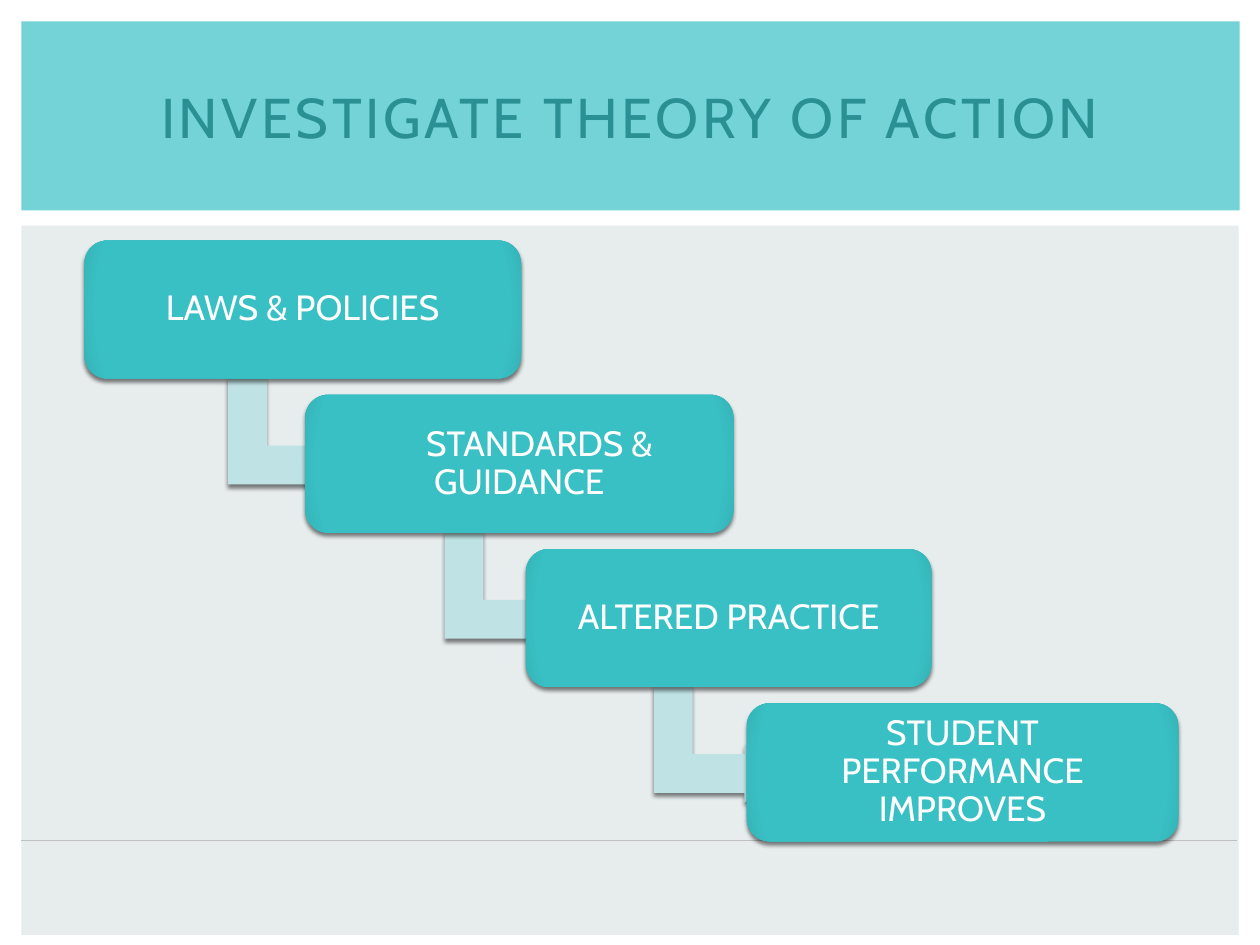
from lxml.etree import SubElement
from pptx import Presentation
from pptx.dml.color import RGBColor
from pptx.enum.shapes import MSO_CONNECTOR as Connector, MSO_SHAPE as Shape
from pptx.enum.text import MSO_ANCHOR as Anchor, MSO_AUTO_SIZE as AutoSize, PP_ALIGN as Align
from pptx.oxml import parse_xml
from pptx.oxml.ns import nsdecls, qn
from pptx.util import Cm, Pt

TITLE = "INVESTIGATE THEORY OF ACTION"
STEPS = [
    {"text": "LAWS & POLICIES", "width": 8.81, "indent": 0},
    {"text": "STANDARDS & GUIDANCE", "width": 8.64, "indent": 0.81},
    {"text": "ALTERED PRACTICE", "width": 8.18, "indent": 0},
    {"text": "STUDENT PERFORMANCE IMPROVES", "width": 8.71, "indent": 0},
]


class Theme:
    font = "Cabin"
    title_size, step_size = 32, 20
    banner, title_text = "73D3D7", "2B9093"
    panel, rule = "E7ECED", "BFBFBF"
    step, step_edge, step_text = "39C0C4", "35B3B7", "FFFFFF"
    arrow = "BFE2E4"


MARGIN = 0.43
FIRST_LEFT, FIRST_TOP = 1.7, 4.85
STEP_RIGHT, STEP_DOWN = 4.45, 3.11
STEP_HEIGHT = 2.78
ARROW_WIDTH, ARROW_HEIGHT = 2.36, 2.67
ARROW_DROP, ARROW_SHIFT = 2.6, 0.17


def color(value):
    return RGBColor.from_string(value)


def paint(shape, fill):
    shape.shadow.inherit = False
    shape.fill.solid()
    shape.fill.fore_color.rgb = color(fill)
    shape.line.fill.background()


def add_block(slide, kind, left, top, width, height, fill):
    shape = slide.shapes.add_shape(kind, Cm(left), Cm(top), Cm(width), Cm(height))
    paint(shape, fill)
    return shape


def cast_shadow(shape):
    effects = shape._element.spPr.find(qn("a:effectLst"))
    effects.append(parse_xml(
        f'<a:outerShdw {nsdecls("a")} blurRad="{Pt(2.5)}" dist="{Pt(2)}" dir="5400000" '
        'rotWithShape="0"><a:srgbClr val="000000"><a:alpha val="50000"/></a:srgbClr></a:outerShdw>'))


def shade_edges(shape):
    properties = shape._element.spPr
    stops = [(0, Theme.step), (90, Theme.step), (100, Theme.step_edge)]
    stop_xml = "".join(f'<a:gs pos="{position * 1000}"><a:srgbClr val="{value}"/></a:gs>'
                       for position, value in stops)
    gradient = parse_xml(
        f'<a:gradFill {nsdecls("a")} rotWithShape="1"><a:gsLst>{stop_xml}</a:gsLst><a:path path="circle">'
        '<a:fillToRect l="100000" t="100000" r="100000" b="100000"/></a:path></a:gradFill>')
    properties.replace(properties.find(qn("a:solidFill")), gradient)


def write(shape, text, size, text_color):
    frame = shape.text_frame
    frame.text = text
    frame.word_wrap = True
    frame.auto_size = AutoSize.NONE
    frame.vertical_anchor = Anchor.MIDDLE
    paragraph = frame.paragraphs[0]
    paragraph.alignment = Align.CENTER
    font = paragraph.runs[0].font
    font.name, font.size = Theme.font, Pt(size)
    font.color.rgb = color(text_color)
    return paragraph


def add_title(slide):
    title = slide.shapes.title
    title.left, title.top, title.width, title.height = Cm(MARGIN), Cm(MARGIN), Cm(24.56), Cm(3.81)
    paint(title, Theme.banner)
    paragraph = write(title, TITLE, Theme.title_size, Theme.title_text)
    paragraph.runs[0].font._element.set("spc", "200")


def add_backdrop(slide):
    add_block(slide, Shape.RECTANGLE, MARGIN, 4.55, 24.54, 14.3, Theme.panel)
    rule = slide.shapes.add_connector(Connector.STRAIGHT, Cm(MARGIN), Cm(16.94), Cm(24.94), Cm(16.94))
    rule.line.color.rgb = color(Theme.rule)
    rule.line.width = Pt(0.79)
    SubElement(rule._element.spPr, qn("a:effectLst"))


def add_arrow(slide, step_center, step_top):
    left = step_center - ARROW_SHIFT - ARROW_WIDTH / 2
    arrow = add_block(slide, Shape.BENT_UP_ARROW, left, step_top + ARROW_DROP,
                      ARROW_WIDTH, ARROW_HEIGHT, Theme.arrow)
    arrow.rotation = 90
    for index, value in enumerate((0.33, 0.25, 0.36)):
        arrow.adjustments[index] = value
    cast_shadow(arrow)


def add_step(slide, step, left, top):
    box = add_block(slide, Shape.ROUNDED_RECTANGLE, left, top, step["width"], STEP_HEIGHT, Theme.step)
    shade_edges(box)
    cast_shadow(box)
    frame = box.text_frame
    frame.margin_left = frame.margin_right = frame.margin_top = frame.margin_bottom = Cm(0.2)
    paragraph = write(box, step["text"], Theme.step_size, Theme.step_text)
    paragraph.line_spacing = 0.9
    if step["indent"]:
        paragraph._p.get_or_add_pPr().set("indent", str(Cm(step["indent"])))


def main():
    presentation = Presentation()
    presentation.slide_width, presentation.slide_height = Cm(25.4), Cm(19.05)
    slide = presentation.slides.add_slide(presentation.slide_layouts[5])
    add_title(slide)
    add_backdrop(slide)
    for index, step in enumerate(STEPS):
        left = FIRST_LEFT + index * STEP_RIGHT
        top = FIRST_TOP + index * STEP_DOWN
        if index < len(STEPS) - 1:
            add_arrow(slide, left + step["width"] / 2, top)
        add_step(slide, step, left, top)
    presentation.save("out.pptx")


if __name__ == "__main__":
    main()
